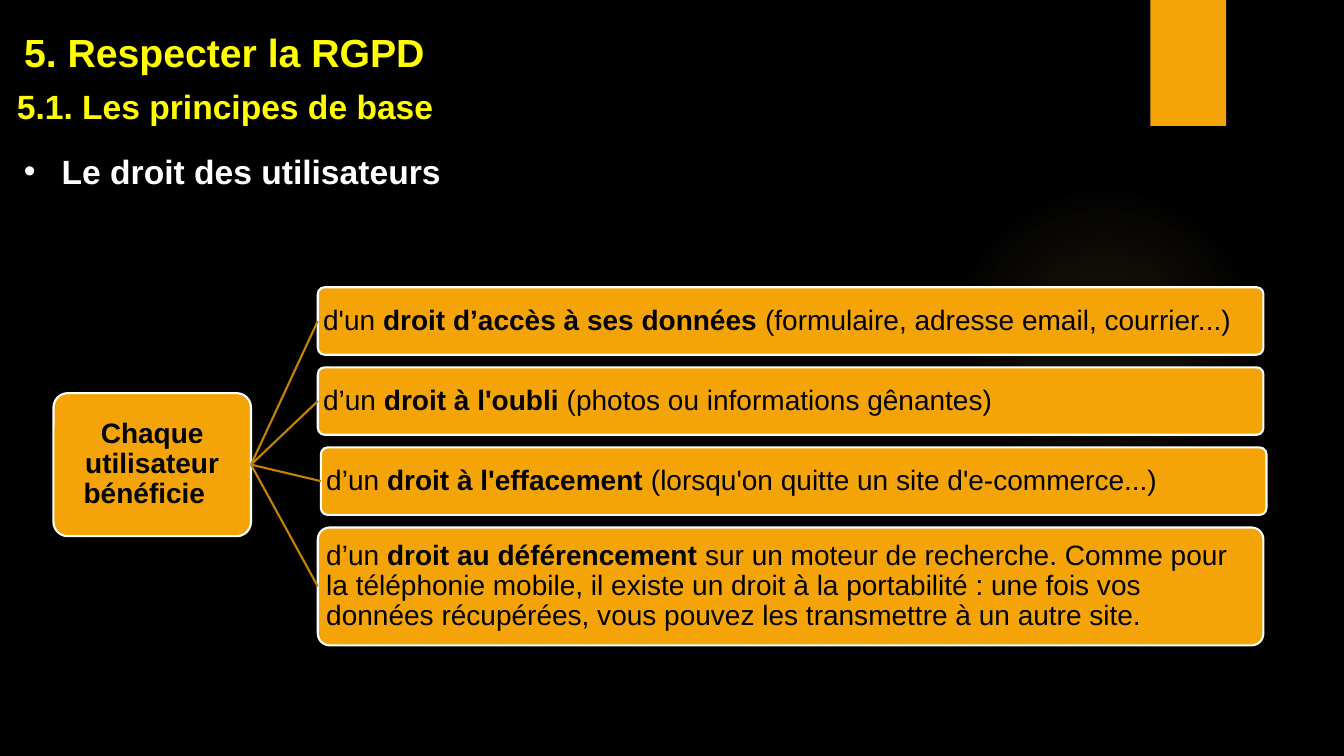
from lxml import etree
from pptx import Presentation
from pptx.dml.color import RGBColor
from pptx.enum.shapes import MSO_CONNECTOR, MSO_SHAPE
from pptx.enum.text import MSO_ANCHOR, MSO_AUTO_SIZE, PP_ALIGN
from pptx.oxml.ns import qn
from pptx.util import Pt

STRAIGHT = MSO_CONNECTOR.STRAIGHT
RECTANGLE, ROUNDED, OVAL = MSO_SHAPE.RECTANGLE, MSO_SHAPE.ROUNDED_RECTANGLE, MSO_SHAPE.OVAL
TOP, MIDDLE = MSO_ANCHOR.TOP, MSO_ANCHOR.MIDDLE
NO_AUTOFIT = MSO_AUTO_SIZE.NONE
LEFT, CENTER, JUSTIFY = PP_ALIGN.LEFT, PP_ALIGN.CENTER, PP_ALIGN.JUSTIFY

BLACK, WHITE, YELLOW = "000000", "FFFFFF", "FFFF00"
ORANGE, DARK_ORANGE, GLOW = "F5A408", "C48306", "FAC96A"
TOP_NODE, NODE_GAP, SHIFT = 205.2, 9, 2.2

RIGHTS = [
    ("d'un ", "droit d’accès à ses données ",
     "(formulaire, adresse email, courrier...)", 0, 48.2, 2.4),
    ("d’un ", "droit à l'oubli ",
     "(photos ou informations gênantes)", 0, 48.2, 2.4),
    ("d’un ", "droit à l'effacement ",
     "(lorsqu'on quitte un site d'e-commerce...)", SHIFT, 48.2, 2.4),
    ("d’un ", "droit au déférencement ",
     "sur un moteur de recherche. Comme pour la téléphonie mobile, il existe "
     "un droit à la portabilité : une fois vos données récupérées, vous pouvez "
     "les transmettre à un autre site.", 0, 84.2, 3.6),
]


def colour(value):
    """Turn a hex string into a colour."""
    return RGBColor.from_string(value)


def write(shape, spans, size=20, color=BLACK, align=LEFT, anchor=MIDDLE,
          inset=(7.2, 3.6), spacing=None, bullet=None, wrap=True):
    """Fill a shape with one paragraph of (text, bold) spans."""
    frame = shape.text_frame
    frame.word_wrap = wrap
    frame.auto_size = NO_AUTOFIT
    frame.vertical_anchor = anchor
    frame.margin_left = frame.margin_right = Pt(inset[0])
    frame.margin_top = frame.margin_bottom = Pt(inset[1])
    para = frame.paragraphs[0]
    para.alignment = align
    if spacing:
        para.line_spacing = spacing
    if bullet:
        properties = para._p.get_or_add_pPr()
        properties.set("marL", str(Pt(27)))
        properties.set("indent", str(-Pt(27)))
        font = etree.SubElement(properties, qn("a:buFont"))
        font.set("typeface", "Arial")
        etree.SubElement(properties, qn("a:buChar")).set("char", bullet)
    for text, bold in spans:
        span = para.add_run()
        span.text = text
        span.font.name = "Arial"
        span.font.size = Pt(size)
        span.font.bold = bold
        span.font.color.rgb = colour(color)


def add_block(page, kind, box, fill, line=None):
    """Add a plain filled shape in the given box."""
    shape = page.shapes.add_shape(kind, *map(Pt, box))
    shape.shadow.inherit = False
    shape.fill.solid()
    shape.fill.fore_color.rgb = colour(fill)
    if line:
        shape.line.color.rgb = colour(line)
        shape.line.width = Pt(1.5)
    else:
        shape.line.fill.background()
    return shape


def add_glow(page, box):
    """Add a faint round glow that fades towards its edge."""
    glow = add_block(page, OVAL, box, GLOW)
    solid = glow._element.spPr.find(qn("a:solidFill"))
    gradient = etree.Element(qn("a:gradFill"))
    stops = etree.SubElement(gradient, qn("a:gsLst"))
    for position, opacity in ((0, 7), (36, 6), (69, 0)):
        stop = etree.SubElement(stops, qn("a:gs"), pos=str(position * 1000))
        tint = etree.SubElement(stop, qn("a:srgbClr"), val=GLOW)
        etree.SubElement(tint, qn("a:alpha"), val=str(opacity * 1000))
    circle = etree.SubElement(gradient, qn("a:path"), path="circle")
    centre = dict.fromkeys("ltrb", "50000")
    etree.SubElement(circle, qn("a:fillToRect"), **centre)
    solid.getparent().replace(solid, gradient)


def add_headings(page, left, top):
    """Place the title, the subtitle and the bulleted topic."""
    title = page.shapes.title
    title.left, title.top, title.width, title.height = map(Pt, (left + 5, top, 304, 41))
    write(title, [("5. Respecter la RGPD", True)], size=28, color=YELLOW,
          align=JUSTIFY, anchor=TOP, wrap=False)
    headings = [("5.1. Les principes de base", 0, 41, 843, YELLOW, None),
                ("Le droit des utilisateurs", 5, 87.8, 897, WHITE, "•")]
    for text, across, down, width, color, bullet in headings:
        box = page.shapes.add_textbox(*map(Pt, (left + across, top + down, width, 36)))
        write(box, [(text, True)], size=24, color=color, align=JUSTIFY,
              anchor=TOP, bullet=bullet)


def add_node(page, box, spans, inset, align=LEFT):
    """Add one rounded box of the tree with its text."""
    node = add_block(page, ROUNDED, box, ORANGE, WHITE)
    node.adjustments[0] = 0.1
    write(node, spans, align=align, inset=(inset, inset), spacing=0.9)
    return node


def add_branch(page, root, node):
    """Join the root's right side to a node's left side."""
    branch = page.shapes.add_connector(STRAIGHT, 0, 0, 0, 0)
    branch.begin_connect(root, 3)
    branch.end_connect(node, 1)
    branch.line.color.rgb = colour(DARK_ORANGE)
    branch.line.width = Pt(1.5)
    etree.SubElement(branch._element.spPr, qn("a:effectLst"))


def add_tree(page, left, top):
    """Place the root box and stack the rights to its right."""
    root = add_node(page, (left, top + 75.6, 141.1, 102.2),
                    [("Chaque utilisateur bénéficie  ", True)], 3.6, CENTER)
    for lead, right, detail, shift, height, inset in RIGHTS:
        node = add_node(page, (left + 188.8 + shift, top, 675.4, height),
                        [(lead, False), (right, True), (detail, False)], inset)
        add_branch(page, root, node)
        top += height + NODE_GAP


def main():
    """Build and save the slide."""
    deck = Presentation()
    deck.slide_width, deck.slide_height = Pt(960), Pt(540)
    page = deck.slides.add_slide(deck.slide_layouts[5])
    page.background.fill.solid()
    page.background.fill.fore_color.rgb = colour(BLACK)
    add_glow(page, (677.5, 131.8, 221.8, 221.8))
    add_block(page, RECTANGLE, (821.8, 0, 54, 90), ORANGE)
    add_headings(page, 5, 16.6)
    add_tree(page, 38.2, TOP_NODE)
    deck.save("out.pptx")


if __name__ == "__main__":
    main()
